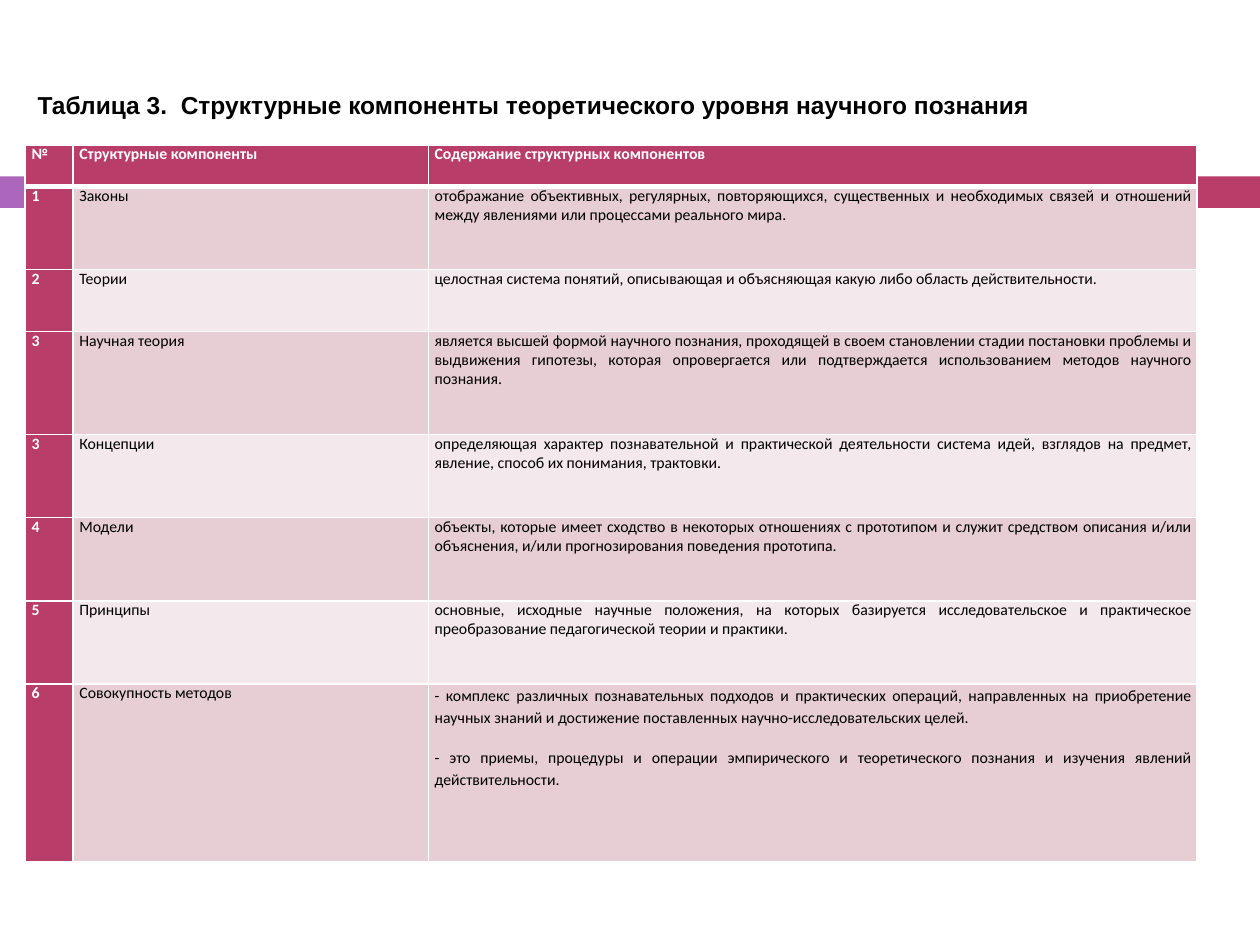
from lxml.etree import SubElement
from pptx import Presentation
from pptx.dml.color import RGBColor
from pptx.enum.shapes import MSO_SHAPE
from pptx.enum.text import MSO_ANCHOR, PP_ALIGN as Align
from pptx.oxml.ns import qn
from pptx.util import Inches, Pt

WHITE = RGBColor(0xFF, 0xFF, 0xFF)
BLACK = RGBColor(0, 0, 0)
PURPLE = RGBColor(0xAC, 0x66, 0xBB)
CRIMSON = RGBColor(0xB8, 0x3D, 0x68)
PINK = RGBColor(0xE6, 0xCE, 0xD4)
PALE = RGBColor(0xF3, 0xE8, 0xEB)

COLUMNS = [0.38, 2.82, 6.1]
HEIGHTS = [0.33, 0.66, 0.49, 0.82, 0.66, 0.66, 0.66, 1.41]
ROWS = [
    ("№", "Структурные компоненты", "Содержание структурных компонентов"),
    ("1", "Законы",
     "отображание объективных, регулярных, повторяющихся, существенных и "
     "необходимых связей и отношений между явлениями или процессами реального мира."),
    ("2", "Теории",
     "целостная система понятий, описывающая и объясняющая какую либо область "
     "действительности."),
    ("3", "Научная теория",
     "является высшей формой научного познания, проходящей в своем становлении "
     "стадии постановки проблемы и выдвижения гипотезы, которая опровергается или "
     "подтверждается использованием методов научного познания."),
    ("3", "Концепции",
     "определяющая характер познавательной и практической деятельности система "
     "идей, взглядов на предмет, явление, способ их понимания, трактовки."),
    ("4", "Модели",
     "объекты, которые имеет сходство в некоторых отношениях с прототипом и служит "
     "средством описания и/или объяснения, и/или прогнозирования поведения прототипа."),
    ("5", "Принципы",
     "основные, исходные научные положения, на которых базируется исследовательское "
     "и практическое преобразование педагогической теории и практики."),
    ("6", "Совокупность методов",
     "- комплекс различных познавательных подходов и практических операций, "
     "направленных на приобретение научных знаний и достижение поставленных "
     "научно-исследовательских целей.\n"
     "- это приемы, процедуры и операции эмпирического и теоретического познания и "
     "изучения явлений действительности."),
]


def write(tf, text, font="Calibri", size=9, color=BLACK, bold=False,
          align=Align.JUSTIFY, line=None, after=None):
    for i, part in enumerate(text.split("\n")):
        p = tf.paragraphs[0] if i == 0 else tf.add_paragraph()
        p.alignment = align
        if line:
            p.line_spacing = line
        if after:
            p.space_after = Pt(after)
        r = p.add_run()
        r.text = part
        r.font.name = font
        r.font.size = Pt(size)
        r.font.bold = bold
        r.font.color.rgb = color


class Page:
    def __init__(self, prs):
        self.s = prs.slides.add_slide(prs.slide_layouts[6])

    def bar(self, x, y, w, h, color):
        sp = self.s.shapes.add_shape(MSO_SHAPE.RECTANGLE, Inches(x), Inches(y),
                                     Inches(w), Inches(h))
        sp.shadow.inherit = False
        sp.fill.solid()
        sp.fill.fore_color.rgb = color
        sp.line.fill.background()

    def title(self, x, y, w, h, text):
        sp = self.s.shapes.add_textbox(Inches(x), Inches(y), Inches(w), Inches(h))
        tf = sp.text_frame
        tf.word_wrap = True
        tf.vertical_anchor = MSO_ANCHOR.BOTTOM
        write(tf, text, font="Arial", size=14, bold=True, align=Align.LEFT)

    def borders(self, cell, top, bottom):
        tcPr = cell._tc.get_or_add_tcPr()
        for side, width in (("L", 1), ("R", 1), ("T", top), ("B", bottom)):
            ln = SubElement(tcPr, qn(f"a:ln{side}"), w=str(Pt(width)))
            fill = SubElement(ln, qn("a:solidFill"))
            SubElement(fill, qn("a:srgbClr"), val=str(WHITE))

    def cell(self, cell, text, row, col):
        strong = row == 0 or col == 0
        cell.margin_left = cell.margin_right = Inches(0.05)
        cell.margin_top = cell.margin_bottom = 0
        self.borders(cell, 3 if row == 1 else 1, 3 if row == 0 else 1)
        cell.fill.solid()
        cell.fill.fore_color.rgb = CRIMSON if strong else PINK if row % 2 else PALE
        spacing = {"line": 1.15, "after": 10} if "\n" in text else {}
        write(cell.text_frame, text, color=WHITE if strong else BLACK,
              bold=strong, **spacing)

    def table(self, x, y, columns, heights, rows):
        table = self.s.shapes.add_table(
            len(rows), len(columns), Inches(x), Inches(y),
            Inches(sum(columns)), Inches(sum(heights))).table
        for column, width in zip(table.columns, columns):
            column.width = Inches(width)
        for i, (height, texts) in enumerate(zip(heights, rows)):
            table.rows[i].height = Inches(height)
            for j, text in enumerate(texts):
                self.cell(table.cell(i, j), text, i, j)


def main():
    prs = Presentation()
    prs.slide_width, prs.slide_height = Inches(10), Inches(7.5)
    page = Page(prs)
    page.bar(0, 1.4, 0.58, 0.25, PURPLE)
    page.bar(0.65, 1.4, 9.35, 0.25, CRIMSON)
    page.table(0.2, 1.15, COLUMNS, HEIGHTS, ROWS)
    page.title(0.2, 0, 8.58, 1, "Таблица 3.  Структурные компоненты "
               "теоретического уровня научного познания")
    prs.save("out.pptx")


if __name__ == "__main__":
    main()
